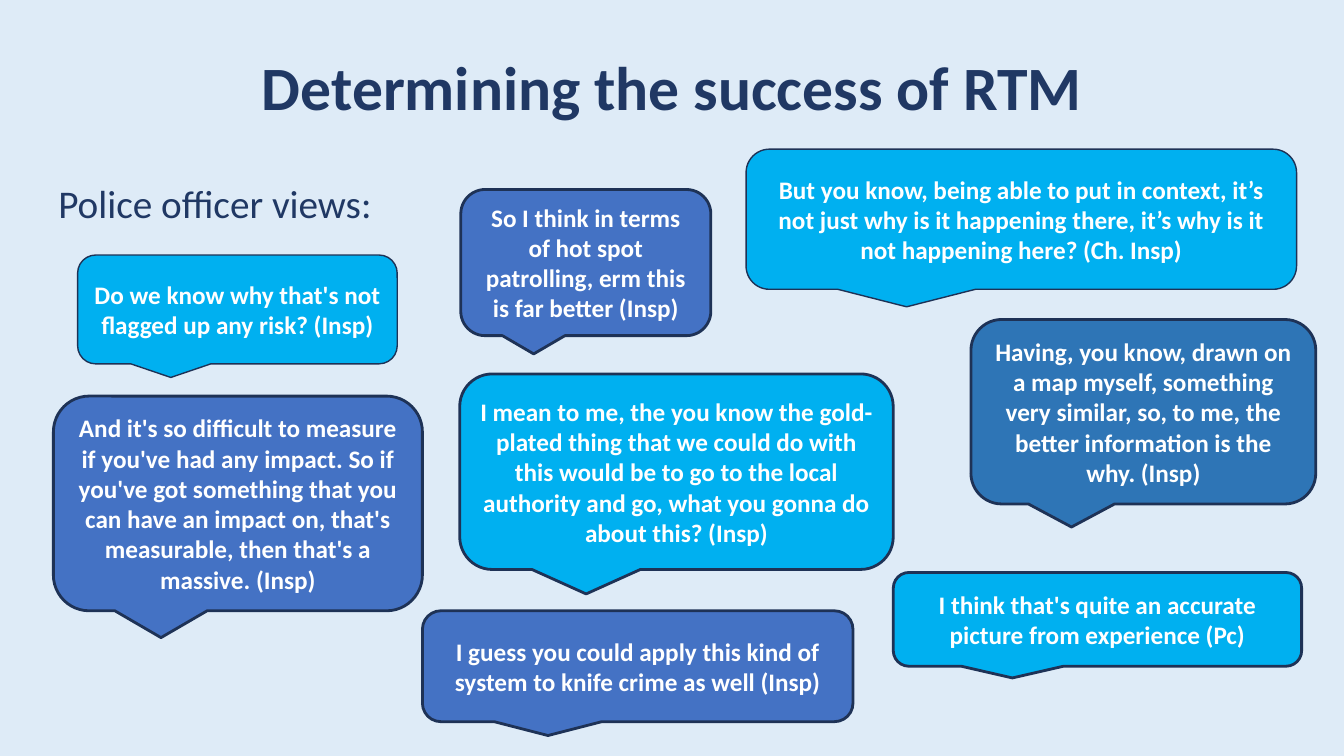
"""Build a slide of police officer quotes in speech bubbles."""
from pptx import Presentation
from pptx.dml.color import RGBColor
from pptx.enum.shapes import MSO_SHAPE
from pptx.enum.text import MSO_ANCHOR, PP_ALIGN
from pptx.util import Inches, Pt

BUBBLE = MSO_SHAPE.ROUNDED_RECTANGULAR_CALLOUT
MIDDLE, TOP = MSO_ANCHOR.MIDDLE, MSO_ANCHOR.TOP
CENTER, LEFT = PP_ALIGN.CENTER, PP_ALIGN.LEFT
PALE = RGBColor(0xDE, 0xEB, 0xF7)
NAVY = RGBColor(0x20, 0x38, 0x64)
EDGE = RGBColor(0x1E, 0x32, 0x56)
INDIGO = RGBColor(0x44, 0x72, 0xC4)
CYAN = RGBColor(0x00, 0xB0, 0xF0)
BLUE = RGBColor(0x2E, 0x75, 0xB6)
WHITE = RGBColor(0xFF, 0xFF, 0xFF)
FONT = "Calibri"

TITLE = "Determining the success of RTM"
INTRO = "Police officer views:"
QUOTES = [
    ("So I think in terms of hot spot patrolling, erm this is far better (Insp)",
     (4.57, 1.88, 2.48, 1.45), INDIGO, 2),
    ("I guess you could apply this kind of system to knife crime as well (Insp)",
     (4.19, 6.06, 4.27, 1.1), INDIGO, 2),
    ("I think that's quite an accurate picture from experience (Pc)",
     (8.86, 5.68, 4.05, 0.93), CYAN, 2),
    ("I mean to me, the you know the gold-plated thing that we could do with "
     "this would be to go to the local authority and go, what you gonna do "
     "about this? (Insp)",
     (4.56, 3.71, 4.3, 1.94), CYAN, 2),
    ("Having, you know, drawn on a map myself, something very similar, so, "
     "to me, the better information is the why. (Insp)",
     (9.63, 3.17, 3.42, 1.83), BLUE, 2),
    ("And it's so difficult to measure if you've had any impact. So if you've "
     "got something that you can have an impact on, that's measurable, then "
     "that's a massive. (Insp)",
     (0.53, 3.93, 3.66, 2.13), INDIGO, 2),
    ("Do we know why that's not flagged up any risk? (Insp)",
     (0.77, 2.53, 3.17, 1.08), CYAN, 1),
    ("But you know, being able to put in context, it’s not just why is it "
     "happening there, it’s why is it not happening here? (Ch. Insp)",
     (7.4, 1.48, 5.46, 1.39), CYAN, 1),
]


def write(shape, text, size, color, bold, align, anchor):
    frame = shape.text_frame
    frame.word_wrap = True
    frame.vertical_anchor = anchor
    para = frame.paragraphs[0]
    para.alignment = align
    run = para.add_run()
    run.text = text
    font = run.font
    font.name, font.size, font.bold = FONT, Pt(size), bold
    font.color.rgb = color
    return para


def add_quote(slide, text, box, fill, width):
    shape = slide.shapes.add_shape(BUBBLE, *map(Inches, box))
    shape.shadow.inherit = False
    shape.fill.solid()
    shape.fill.fore_color.rgb = fill
    shape.line.color.rgb = EDGE
    shape.line.width = Pt(width)
    write(shape, text, 18, WHITE, True, CENTER, MIDDLE)


def main():
    deck = Presentation()
    deck.slide_width, deck.slide_height = Inches(13.33), Inches(7.5)
    slide = deck.slides.add_slide(deck.slide_layouts[6])
    slide.background.fill.solid()
    slide.background.fill.fore_color.rgb = PALE

    title = slide.shapes.add_textbox(*map(Inches, (0.92, 0.4, 11.5, 1)))
    para = write(title, TITLE, 44, NAVY, True, CENTER, MIDDLE)
    para.line_spacing = 0.9
    intro = slide.shapes.add_textbox(*map(Inches, (0.48, 1.73, 3.66, 0.57)))
    write(intro, INTRO, 28, NAVY, False, LEFT, TOP)

    for quote in QUOTES:
        add_quote(slide, *quote)
    deck.save("out.pptx")


if __name__ == "__main__":
    main()
